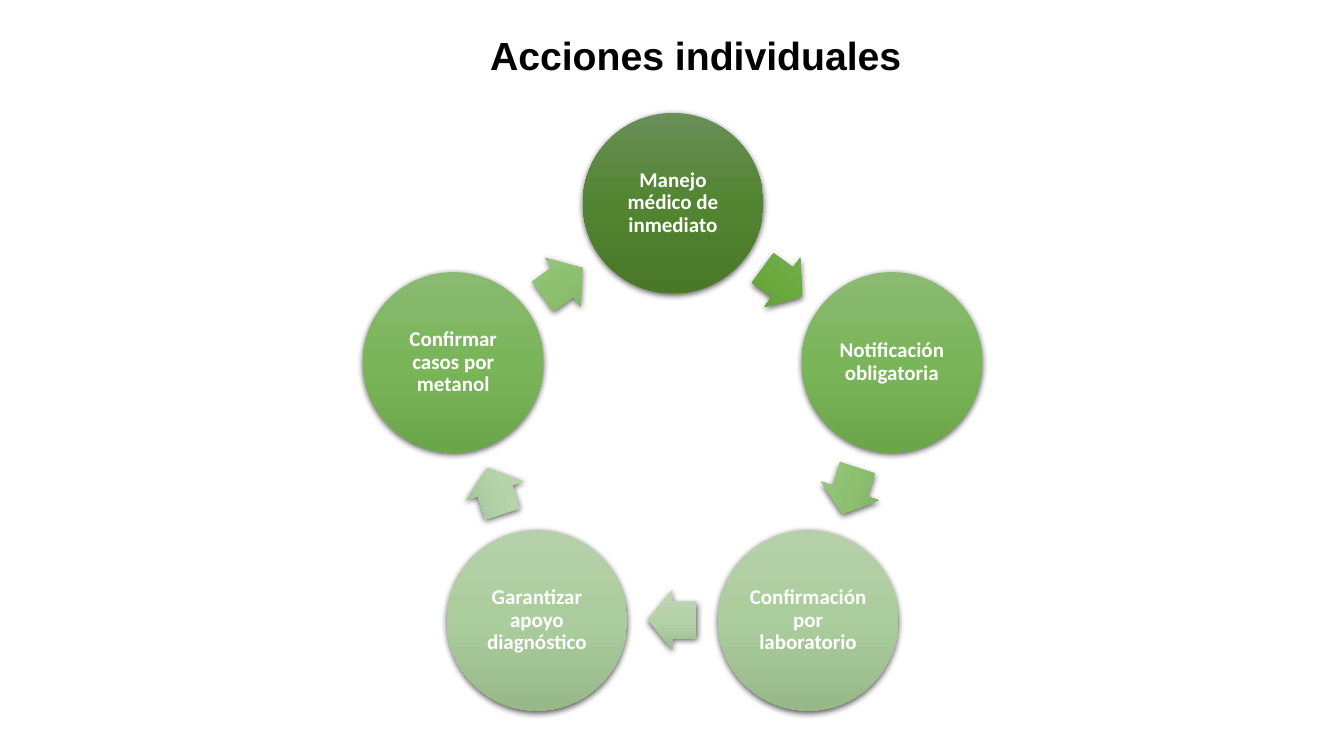
import copy
import math

from pptx import Presentation
from pptx import util as u
from pptx.dml.color import RGBColor
from pptx.enum import shapes, text
from pptx.oxml import parse_xml
from pptx.oxml.ns import nsdecls, qn

PX = 9144  # 100 px to the inch
COLORS = {"title": "000000", "label": "FFFFFF"}
# Gradient stops from top to bottom
GRADIENTS = {
    "dark": ("6A8F57", "528431", "487828"),
    "medium": ("8ABA72", "7AB559", "6BA64A"),
    "light": ("B6D1AA", "ABCC9C", "97B888"),
    "arrow dark": ("7DB060", "6AAA3F", "5D9B34"),
    "arrow medium": ("9BC585", "8DC170", "7CAF60"),
    "arrow light": ("BED6B4", "B4D2A7", "9FBD92"),
}
SHADOW = (
    f'<a:outerShdw {nsdecls("a")} blurRad="57150" dist="19050" dir="5400000" '
    'algn="ctr" rotWithShape="0"><a:srgbClr val="000000">'
    '<a:alpha val="63000"/></a:srgbClr></a:outerShdw>'
)


def add_shaded(kind, center, width, height, gradient):
    """Add a shape about a centre, with a three-stop gradient and a soft shadow."""
    left, top = round(center[0] - width / 2), round(center[1] - height / 2)
    shape = page.shapes.add_shape(kind, left * PX, top * PX, width * PX, height * PX)
    shape.line.fill.background()
    shape.fill.gradient()
    shape.fill.gradient_angle = 270
    properties = shape._element.spPr
    stops = properties.find(".//" + qn("a:gsLst"))
    stops.insert(1, copy.deepcopy(stops[0]))
    for index, stop in enumerate(shape.fill.gradient_stops):
        stop.position = index / 2
        stop.color.rgb = RGBColor.from_string(GRADIENTS[gradient][index])
    shape.shadow.inherit = False
    properties.find(qn("a:effectLst")).append(parse_xml(SHADOW))
    return shape


def write_text(box, words, font, size, color):
    """Set one centred bold paragraph in the middle of a box."""
    frame = box.text_frame
    frame.text = words
    frame.word_wrap = True
    frame.vertical_anchor = text.MSO_ANCHOR.MIDDLE
    paragraph = frame.paragraphs[0]
    paragraph.alignment = text.PP_ALIGN.CENTER
    paragraph.line_spacing = 0.9
    span = paragraph.runs[0]
    span.font.name = font
    span.font.size = u.Pt(size)
    span.font.bold = True
    span.font.color.rgb = RGBColor.from_string(COLORS[color])


deck = Presentation()
deck.slide_width, deck.slide_height = 1333 * PX, 750 * PX
page = deck.slides.add_slide(deck.slide_layouts[6])

# Title
title = page.shapes.add_textbox(115 * PX, 13 * PX, 1150 * PX, 89 * PX)
write_text(title, "Acciones individuales", "Arial", 28, "title")

# Cycle of actions, clockwise from the top: label, circle shade, next arrow shade
actions = [
    ("Manejo médico de inmediato", "dark", "arrow dark"),
    ("Notificación obligatoria", "medium", "arrow medium"),
    ("Confirmación por laboratorio", "light", "arrow light"),
    ("Garantizar apoyo diagnóstico", "light", "arrow light"),
    ("Confirmar casos por metanol", "medium", "arrow medium"),
]
CENTER_X, CENTER_Y, RADIUS = 667, 430, 229
DIAMETER, INSET = 179, 2
ARROW_WIDTH, ARROW_HEIGHT = 48, 60
step = 360 / len(actions)
centers = [
    (
        CENTER_X + RADIUS * math.sin(math.radians(step * index)),
        CENTER_Y - RADIUS * math.cos(math.radians(step * index)),
    )
    for index in range(len(actions))
]

for index, (label, shade, arrow_shade) in enumerate(actions):
    # Circle
    here, following = centers[index], centers[(index + 1) % len(centers)]
    circle = add_shaded(shapes.MSO_SHAPE.OVAL, here, DIAMETER, DIAMETER, shade)
    frame = circle.text_frame
    frame.margin_left = frame.margin_right = INSET * PX
    frame.margin_top = frame.margin_bottom = INSET * PX
    write_text(circle, label, "Calibri", 15, "label")

    # Arrow halfway to the next circle; leftward ones keep their light side up
    heading = step * (index + 0.5)
    leftward = 90 < heading < 270
    kind = shapes.MSO_SHAPE.LEFT_ARROW if leftward else shapes.MSO_SHAPE.RIGHT_ARROW
    middle = [(a + b) / 2 for a, b in zip(here, following)]
    arrow = add_shaded(kind, middle, ARROW_WIDTH, ARROW_HEIGHT, arrow_shade)
    arrow.adjustments[0], arrow.adjustments[1] = 0.6, 0.5
    arrow.rotation = heading - 180 if leftward else heading

deck.save("out.pptx")
